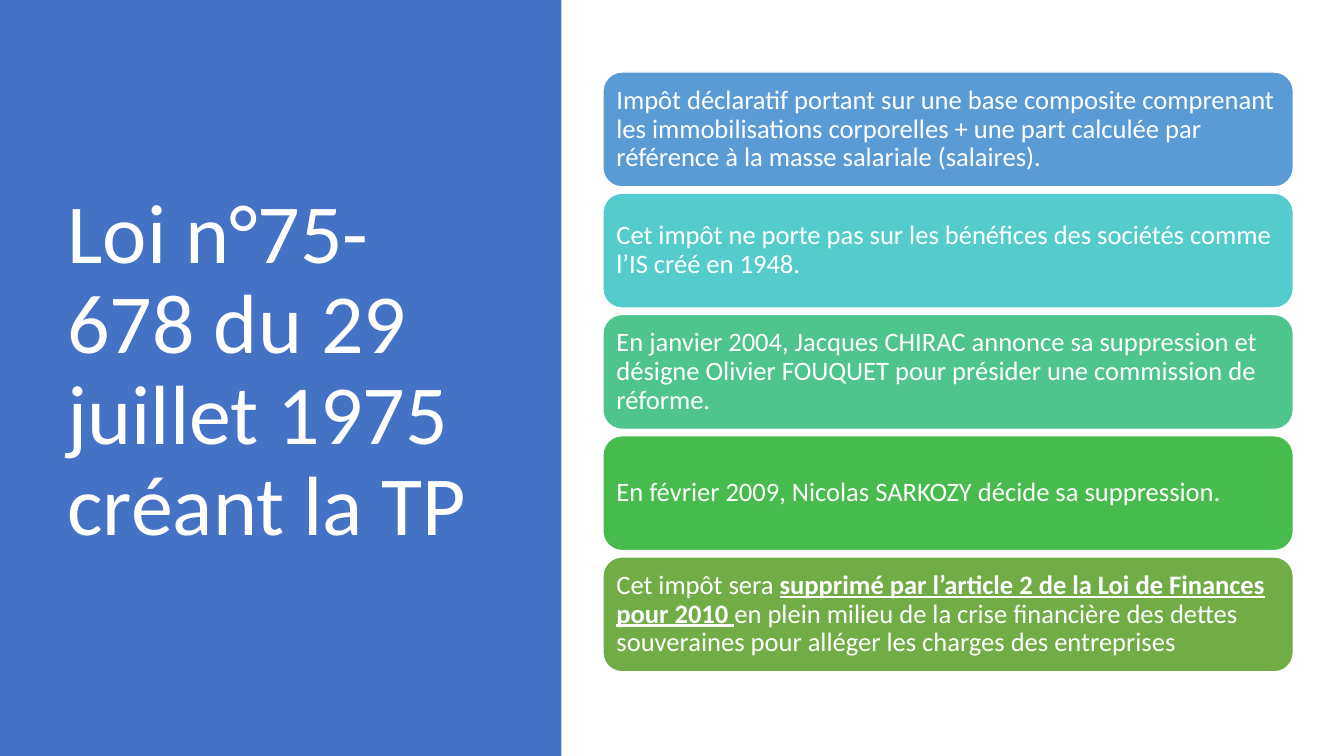
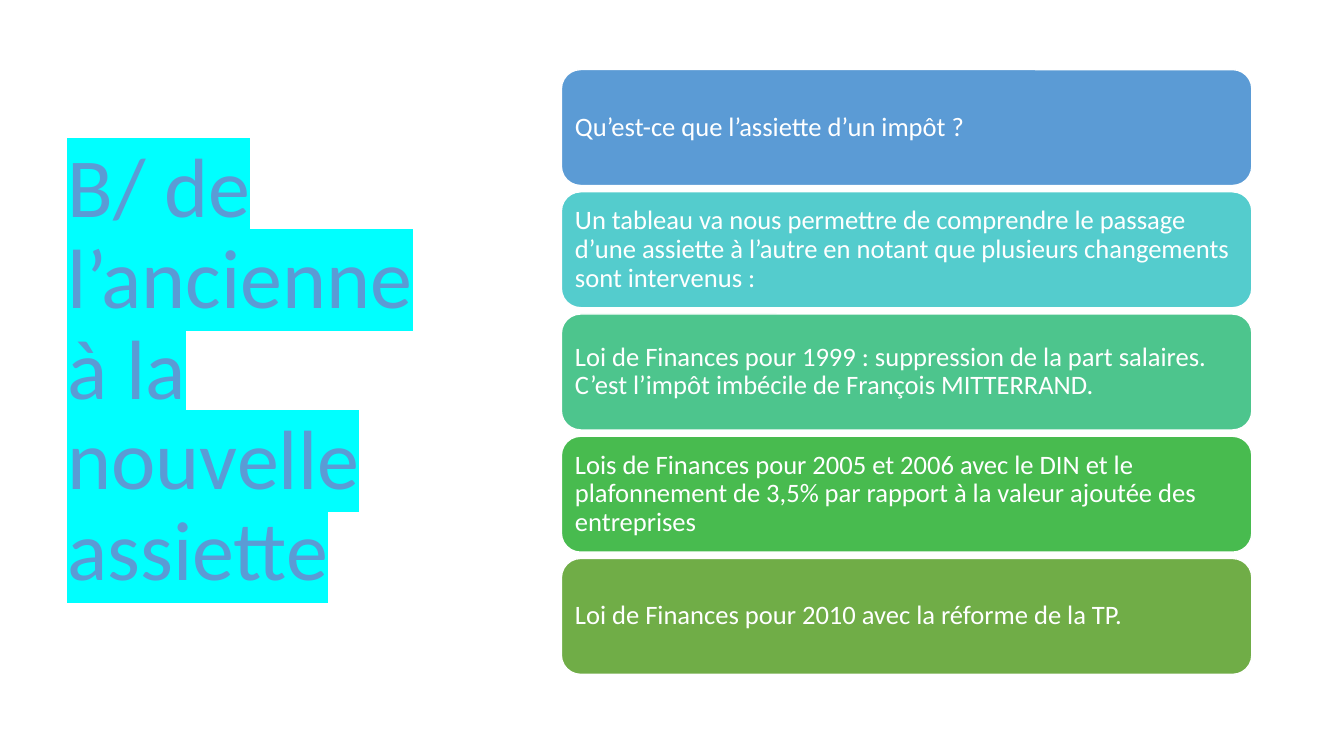
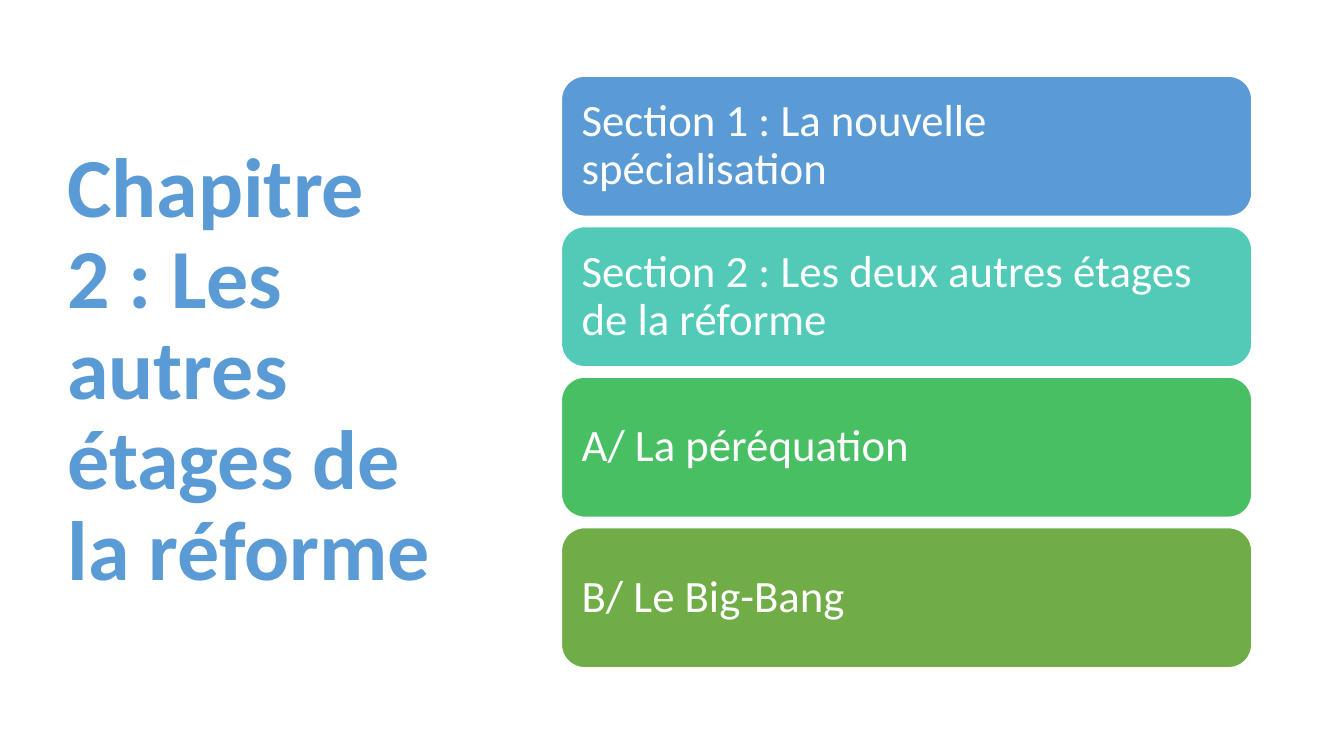
import pptx
import pptx.util
import pptx.dml.color
import pptx.enum.shapes
import pptx.enum.text
import lxml.etree

Pt = pptx.util.Pt
Rgb = pptx.dml.color.RGBColor.from_string
Shape = pptx.enum.shapes.MSO_SHAPE
Anchor = pptx.enum.text.MSO_ANCHOR
Align = pptx.enum.text.PP_ALIGN
AutoSize = pptx.enum.text.MSO_AUTO_SIZE

THEME = {
    "font": "Calibri",
    "white": "FFFFFF",
    "band": "4472C4",
    "accent": "5B9BD5",
    "highlight": "00FFFF",
    "five_cards": ["5B9BD5", "54CCCD", "4DC58D", "48BB4F", "70AD47"],
    "four_cards": ["5B9BD5", "52CAB8", "49BF64", "70AD47"],
    "title_size": 60,
    "text_size": 19,
    "section_size": 32,
}
SLIDE_SIZE = (960, 540)
TITLE_BOX = (41, 49, 299.5, 433.4)
BAND_WIDTH = 401
CARD_WIDTH = 493.2
INSET_RATIO = 0.3
STRONG = {"bold": True, "underline": True}

SLIDES = [
    {
        "title": "Loi n°75-678 du 29 juillet 1975 créant la TP",
        "title_color": "white",
        "band": True,
        "stack": {"left": 430.6, "height": 82.1, "gap": 4.5},
        "colors": "five_cards",
        "size": "text_size",
        "cards": [
            [("Impôt déclaratif portant sur une base composite comprenant les immobilisations corporelles + une part calculée par référence à la masse salariale (salaires).", {})],
            [("Cet impôt ne porte pas sur les bénéfices des sociétés comme l’IS créé en 1948.", {})],
            [("En janvier 2004, Jacques CHIRAC annonce sa suppression et désigne Olivier FOUQUET pour présider une commission de réforme.", {})],
            [("En février 2009, Nicolas SARKOZY décide sa suppression.", {})],
            [
                ("Cet impôt sera ", {}),
                ("supprimé par l’article 2 de la Loi de Finances pour 2010 ", STRONG),
                ("en plein milieu de la crise financière des dettes souveraines pour alléger les charges des entreprises", {}),
            ],
        ],
    },
    {
        "title": "B/ de l’ancienne à la nouvelle assiette",
        "title_color": "accent",
        "highlight": True,
        "stack": {"left": 401, "height": 82.8, "gap": 4.5},
        "colors": "five_cards",
        "size": "text_size",
        "cards": [
            [("Qu’est-ce que l’assiette d’un impôt ?", {})],
            [("Un tableau va nous permettre de comprendre le passage d’une assiette à l’autre en notant que plusieurs changements sont intervenus :", {})],
            [("Loi de Finances pour 1999 : suppression de la part salaires. C’est l’impôt imbécile de François MITTERRAND.", {})],
            [("Lois de Finances pour 2005 et 2006 avec le DIN et le plafonnement de 3,5% par rapport à la valeur ajoutée des entreprises", {})],
            [("Loi de Finances pour 2010 avec la réforme de la TP.", {})],
        ],
    },
    {
        "title": "Chapitre 2 : Les autres étages de la réforme",
        "title_color": "accent",
        "title_format": {"bold": True},
        "stack": {"left": 401, "height": 100.1, "gap": 7.4},
        "colors": "four_cards",
        "size": "section_size",
        "cards": [
            [("Section 1 : La nouvelle spécialisation", {})],
            [("Section 2 : Les deux autres étages de la réforme", {})],
            [("A/ La péréquation", {})],
            [("B/ Le Big-Bang", {})],
        ],
    },
]


def assign(target, values):
    for name, value in values.items():
        setattr(target, name, value)


def write(box, spans, size, color, frame_format):
    frame = box.text_frame
    assign(frame, {"word_wrap": True, "auto_size": AutoSize.NONE,
                   "vertical_anchor": Anchor.MIDDLE, **frame_format})
    para = frame.paragraphs[0]
    assign(para, {"alignment": Align.LEFT, "line_spacing": 0.9})
    for text, extra in spans:
        span = para.add_run()
        span.text = text
        assign(span.font, {"name": THEME["font"], "size": Pt(THEME[size]), **extra})
        span.font.color.rgb = Rgb(THEME[color])
    return para


def add_block(page, kind, place, color):
    block = page.shapes.add_shape(kind, *map(Pt, place))
    block.shadow.inherit = False
    block.fill.solid()
    block.fill.fore_color.rgb = Rgb(color)
    return block


def highlight(para):
    ns = "{http://schemas.openxmlformats.org/drawingml/2006/main}"
    for fill in para.runs[0].font._element.findall(ns + "solidFill"):
        mark = lxml.etree.Element(ns + "highlight")
        lxml.etree.SubElement(mark, ns + "srgbClr", val=THEME["highlight"])
        fill.addnext(mark)


def add_title(page, content):
    title = page.shapes.title
    assign(title, dict(zip(("left", "top", "width", "height"), map(Pt, TITLE_BOX))))
    spans = [(content["title"], content.get("title_format", {}))]
    para = write(title, spans, "title_size", content["title_color"], {})
    if content.get("highlight"):
        highlight(para)
    if content.get("band"):
        band = add_block(page, Shape.RECTANGLE, (0, 0, BAND_WIDTH, SLIDE_SIZE[1]), THEME["band"])
        band.line.fill.background()
        title.element.addprevious(band.element)


def add_cards(page, content):
    left, height, gap = (content["stack"][key] for key in ("left", "height", "gap"))
    count = len(content["cards"])
    middle = TITLE_BOX[1] + TITLE_BOX[3] / 2
    top = middle - (count * height + (count - 1) * gap) / 2
    inset = Pt(INSET_RATIO * THEME[content["size"]])
    margins = {"margin_" + side: inset for side in ("left", "top", "right", "bottom")}
    for index, (spans, color) in enumerate(zip(content["cards"], THEME[content["colors"]])):
        place = (left, top + index * (height + gap), CARD_WIDTH, height)
        card = add_block(page, Shape.ROUNDED_RECTANGLE, place, color)
        card.line.color.rgb = Rgb(THEME["white"])
        card.line.width = Pt(1)
        write(card, spans, content["size"], "white", margins)


def main():
    deck = pptx.Presentation()
    deck.slide_width, deck.slide_height = map(Pt, SLIDE_SIZE)
    for content in SLIDES:
        page = deck.slides.add_slide(deck.slide_layouts[5])
        add_title(page, content)
        add_cards(page, content)
    deck.save("out.pptx")


if __name__ == "__main__":
    main()
